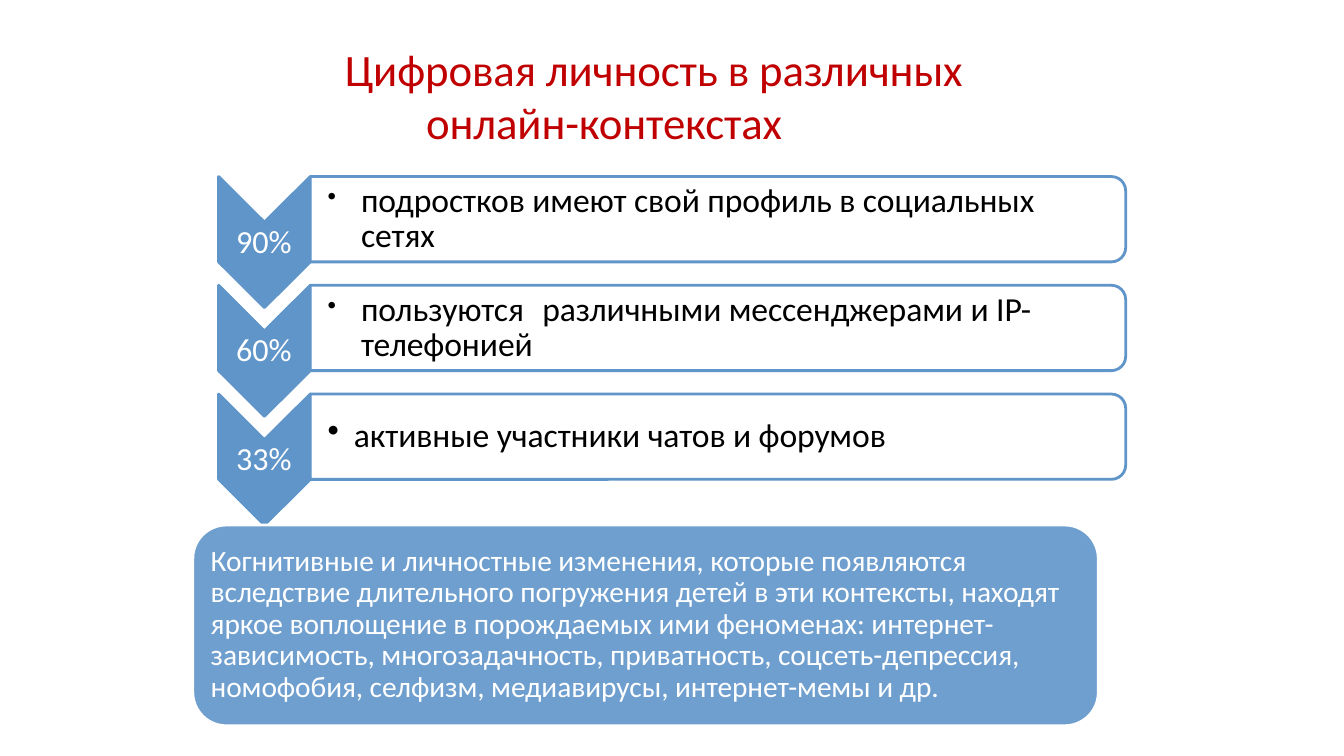
from math import cos, pi, sin

from lxml.etree import SubElement
from pptx import Presentation
from pptx.dml.color import RGBColor
from pptx.enum.shapes import MSO_SHAPE
from pptx.oxml.ns import qn
from pptx.util import Cm, Pt

BLUE, RED, WHITE, BLACK = "6095C9", "C00000", "FFFFFF", "000000"


def rgb(value):
    return RGBColor.from_string(value)


class SlideBuilder:
    font = "Calibri"
    line_width = Pt(2)

    def __init__(self, s):
        self.s = s

    def style(self, sp, fill, line, opacity=100):
        sp.shadow.inherit = False
        sp.fill.solid()
        sp.fill.fore_color.rgb = rgb(fill)
        if opacity < 100:
            color = sp.fill._xPr.find(qn("a:solidFill"))[0]
            SubElement(color, qn("a:alpha"), val=str(opacity * 1000))
        sp.line.color.rgb = rgb(line)
        sp.line.width = self.line_width

    def outline(self, points, fill, line, opacity=100):
        start, *rest = [(Cm(x), Cm(y)) for x, y in points]
        builder = self.s.shapes.build_freeform(*start)
        builder.add_line_segments(rest, close=True)
        self.style(builder.convert_to_shape(), fill, line, opacity)

    def chevron(self, x, y, w, shoulder, notch):
        mid, right = x + w / 2, x + w
        points = [(x, y), (mid, y + notch), (right, y), (right, y + shoulder),
                  (mid, y + shoulder + notch), (x, y + shoulder)]
        self.outline(points, BLUE, BLUE)

    def bar(self, x, y, w, h, radius, steps=6):
        """Box with square corners on the left and round ones on the right."""
        turns = [pi / 2 * i / steps for i in range(steps + 1)]
        cx = x + w - radius
        top = [(cx + radius * sin(t), y + radius - radius * cos(t)) for t in turns]
        bottom = [(px, 2 * y + h - py) for px, py in reversed(top)]
        self.outline([(x, y), *top, *bottom, (x, y + h)], WHITE, BLUE, 90)

    def panel(self, x, y, w, h):
        sp = self.s.shapes.add_shape(MSO_SHAPE.ROUNDED_RECTANGLE,
                                     Cm(x), Cm(y), Cm(w), Cm(h))
        self.style(sp, BLUE, WHITE, 90)

    def text(self, text, box, size, color, inset=0.03, spacing=None,
             hang=(0, 0), bullet=None, tab=None, tracking=0):
        tf = self.s.shapes.add_textbox(*map(Cm, box)).text_frame
        frame = {"word_wrap": True, "margin_left": 0, "margin_right": 0,
                 "margin_top": Cm(inset), "margin_bottom": 0}
        for name, value in frame.items():
            setattr(tf, name, value)
        p = tf.paragraphs[0]
        for name, value in (spacing or {"space_before": Pt(1)}).items():
            setattr(p, name, value)
        # Indents, bullet and tab stop
        pPr = p._p.get_or_add_pPr()
        left, first = hang
        pPr.set("marL", str(Cm(left)))
        pPr.set("indent", str(Cm(first)))
        if bullet:
            SubElement(pPr, qn("a:buSzPct"), val=str(bullet * 1000))
            SubElement(pPr, qn("a:buChar"), char="•")
        if tab:
            tabs = SubElement(pPr, qn("a:tabLst"))
            SubElement(tabs, qn("a:tab"), pos=str(Cm(tab)), algn="l")
        # Lines of the paragraph
        for i, line in enumerate(text.split("\n")):
            if i:
                p.add_line_break()
            r = p.add_run()
            r.text = line
            for name, value in {"name": self.font, "size": Pt(size)}.items():
                setattr(r.font, name, value)
            r.font.color.rgb = rgb(color)
            r._r.get_or_add_rPr().set("spc", str(tracking))


def main():
    prs = Presentation()
    prs.slide_width, prs.slide_height = Cm(33.87), Cm(19.05)
    s = SlideBuilder(prs.slides.add_slide(prs.slide_layouts[6]))

    # Title
    s.text("Цифровая личность в различных\nонлайн-контекстах",
           (7.39, 0.99, 18.49, 2.77), 32, RED, inset=0.08, tracking=-10,
           spacing={"line_spacing": Pt(38), "space_before": Pt(2.4)},
           hang=(3.35, -2.05))

    # Rows: share in a chevron, statement in a bar
    two_lines = {"inset": 0.18, "hang": (0.84, -0.84), "bullet": 75,
                 "spacing": {"line_spacing": Pt(25), "space_before": Pt(5)}}
    one_line = {"hang": (0.66, -0.66), "bullet": 100}
    rows = [
        ("90%", "подростков имеют свой профиль в социальных\nсетях", 0.02, two_lines),
        ("60%", "пользуются\tразличными мессенджерами и IP-\nтелефонией", 0.02,
         {**two_lines, "tab": 5.41}),
        ("33%", "активные участники чатов и форумов", 0.48, one_line),
    ]
    top, pitch = 4.45, 2.74
    for i, (share, statement, drop, layout) in enumerate(rows):
        y = top + i * pitch
        s.chevron(5.51, y, 2.31, 2.15, 1.15)
        s.text(share, (5.92, y + 1.09, 1.47, 1.04), 23, WHITE, hang=(0.03, 0))
        s.bar(7.82, y, 20.55, 2.15, 0.36)
        s.text(statement, (8.26, y + drop, 17.98, 2.15 - drop), 24, BLACK,
               tracking=-5, **layout)

    # Conclusion
    s.panel(4.86, 13.23, 22.82, 5.06)
    s.text("Когнитивные и личностные изменения, которые появляются\n"
           "вследствие длительного погружения детей в эти контексты, находят\n"
           "яркое воплощение в порождаемых ими феноменах: интернет-\n"
           "зависимость, многозадачность, приватность, соцсеть-депрессия,\n"
           "номофобия, селфизм, медиавирусы, интернет-мемы и др.",
           (5.28, 13.64, 21.72, 4.14), 21, WHITE, inset=0.13, tracking=-5,
           spacing={"line_spacing": 0.89, "space_before": Pt(3.7)},
           hang=(0.03, 0))

    prs.save("out.pptx")


if __name__ == "__main__":
    main()
